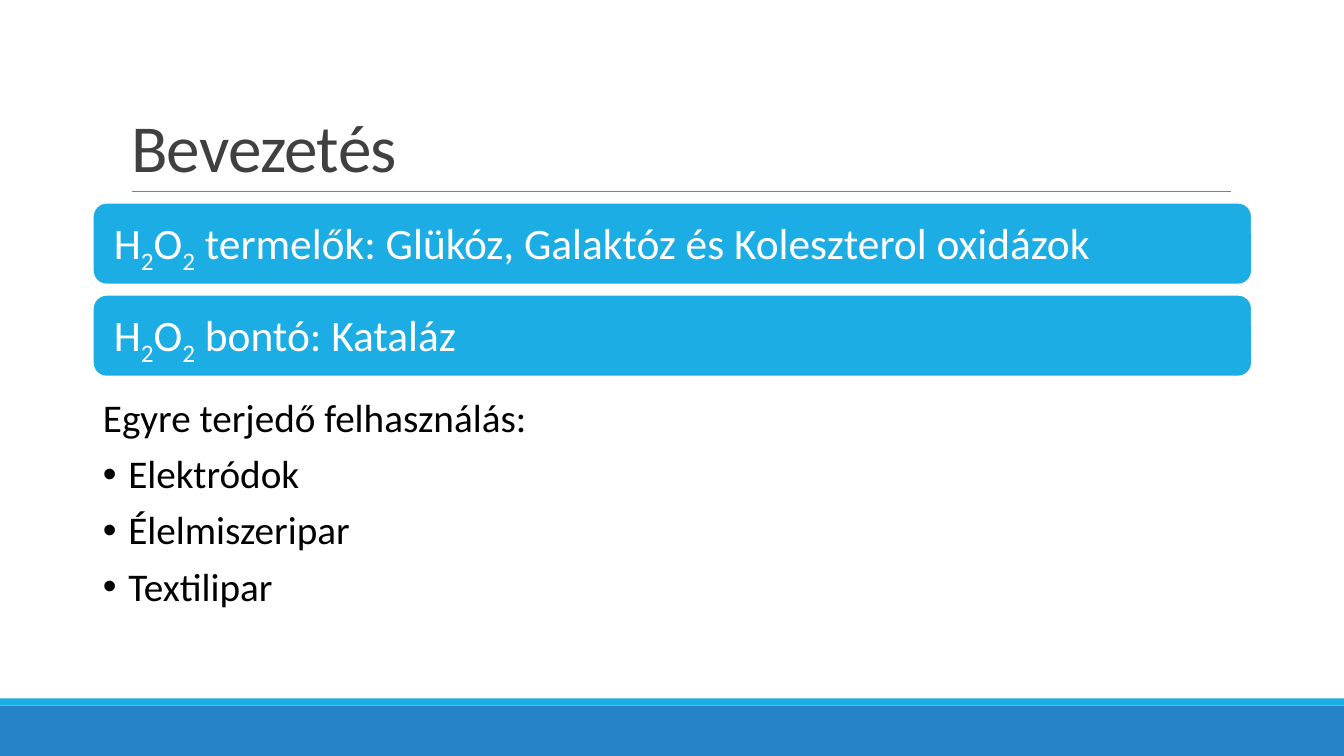
"""Build the introduction slide on enzymes that produce or break down hydrogen peroxide."""
from lxml.etree import SubElement
from pptx import Presentation
from pptx.dml.color import RGBColor
from pptx.enum.shapes import MSO_CONNECTOR, MSO_SHAPE
from pptx.enum.text import MSO_ANCHOR, MSO_AUTO_SIZE, PP_ALIGN
from pptx.oxml.ns import qn
from pptx.util import Cm, Pt

WHITE = RGBColor(0xFF, 0xFF, 0xFF)
BLACK = RGBColor(0x00, 0x00, 0x00)
DARK_GREY = RGBColor(0x40, 0x40, 0x40)
GREY = RGBColor(0x80, 0x80, 0x80)
BLUE = RGBColor(0x26, 0x83, 0xC6)
CYAN = RGBColor(0x1C, 0xAD, 0xE4)


def add_block(page, kind, left, top, width, height, color):
    block = page.shapes.add_shape(kind, Cm(left), Cm(top), Cm(width), Cm(height))
    block.shadow.inherit = False
    block.fill.solid()
    block.fill.fore_color.rgb = color
    block.line.fill.background()
    return block


def style_paragraph(para, size, color, line_spacing):
    para.alignment = PP_ALIGN.LEFT
    para.line_spacing = line_spacing
    para.font.name = "Calibri"
    para.font.size = Pt(size)
    para.font.color.rgb = color


deck = Presentation()
deck.slide_width, deck.slide_height = Cm(33.87), Cm(19.05)
page = deck.slides.add_slide(deck.slide_layouts[1])

add_block(page, MSO_SHAPE.RECTANGLE, 0, 17.78, 33.87, 1.27, BLUE)
add_block(page, MSO_SHAPE.RECTANGLE, 0, 17.6, 33.87, 0.18, CYAN)

rule = page.shapes.add_connector(MSO_CONNECTOR.STRAIGHT, Cm(3.33), Cm(4.83), Cm(31.01), Cm(4.83))
rule.line.color.rgb = GREY
rule.line.width = Pt(0.5)
SubElement(rule._element.spPr, qn("a:effectLst"))

title = page.shapes.title
title.left, title.top, title.width, title.height = Cm(3.05), Cm(0.79), Cm(27.94), Cm(4.04)
title.text_frame.text = "Bevezetés"
title.text_frame.auto_size = MSO_AUTO_SIZE.NONE
title.text_frame.vertical_anchor = MSO_ANCHOR.BOTTOM
heading = title.text_frame.paragraphs[0]
style_paragraph(heading, 48, DARK_GREY, 0.85)
heading.runs[0].font._element.set("spc", "-50")

enzyme_groups = [" termelők: Glükóz, Galaktóz és Koleszterol oxidázok", " bontó: Kataláz"]
for index, enzymes in enumerate(enzyme_groups):
    box = add_block(page, MSO_SHAPE.ROUNDED_RECTANGLE, 2.34, 5.11 + index * 2.32, 29.21, 2.06, CYAN)
    box.line.color.rgb = WHITE
    box.line.width = Pt(1.25)
    frame = box.text_frame
    frame.word_wrap = True
    frame.vertical_anchor = MSO_ANCHOR.MIDDLE
    frame.margin_left = frame.margin_right = Cm(0.43)
    para = frame.paragraphs[0]
    style_paragraph(para, 31, WHITE, 0.9)
    for text in ["H", "2", "O", "2", enzymes]:
        span = para.add_run()
        span.text = text
        if text == "2":
            span.font._element.set("baseline", "-25000")

body = page.placeholders[1]
body.left, body.top, body.width, body.height = Cm(2.34), Cm(9.91), Cm(29.21), Cm(8.13)
frame = body.text_frame
frame.text = "Egyre terjedő felhasználás:\nElektródok\nÉlelmiszeripar\nTextilipar"
frame.auto_size = MSO_AUTO_SIZE.NONE
for index, para in enumerate(frame.paragraphs):
    properties = para._p.get_or_add_pPr()
    indent = Cm(0.64) if index else 0
    properties.set("marL", str(indent))
    properties.set("indent", str(-indent))
    if index:
        SubElement(properties, qn("a:buChar"), char="•")
    else:
        SubElement(properties, qn("a:buNone"))
    style_paragraph(para, 28, BLACK, 0.9)
    para.space_before = Pt(10)

deck.save("out.pptx")
